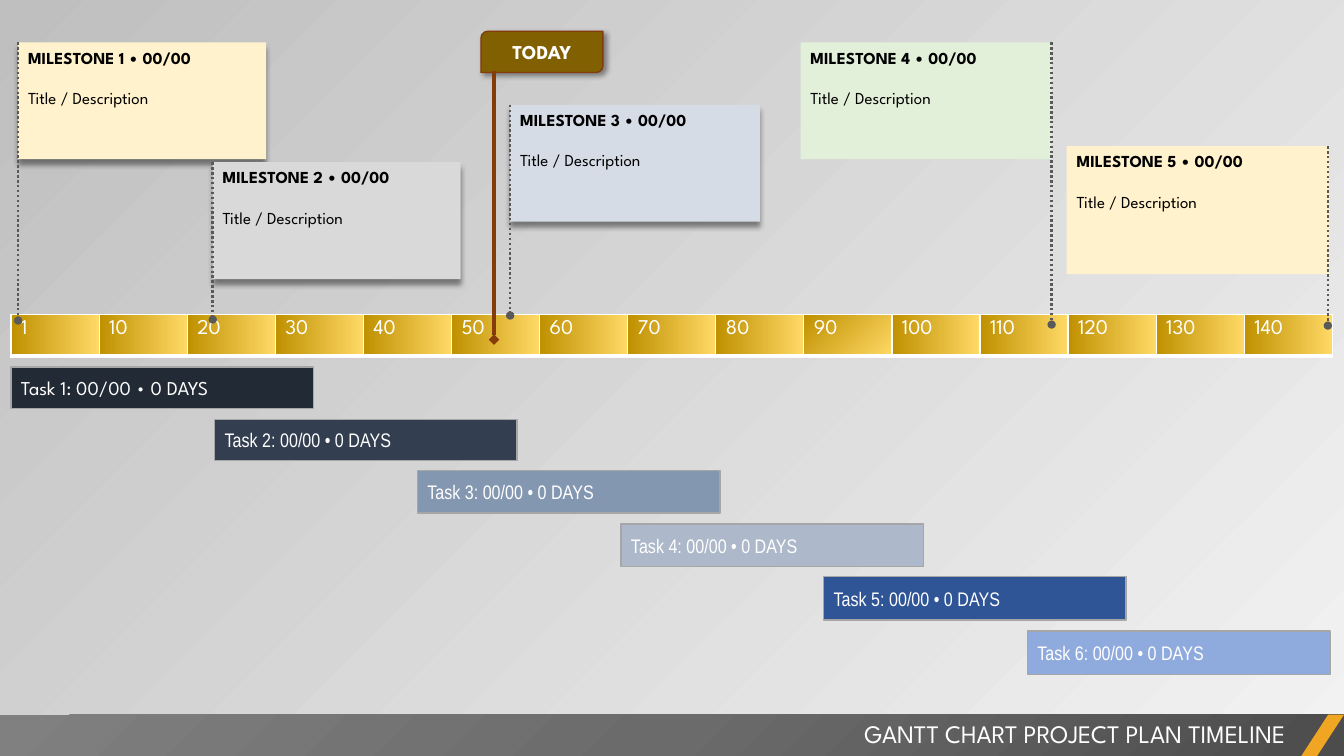
from dataclasses import dataclass

from lxml import etree
from pptx import Presentation
from pptx import util as u
from pptx.dml.color import RGBColor
from pptx.dml.fill import FillFormat
from pptx.enum import dml, shapes, text
from pptx.oxml import parse_xml
from pptx.oxml.ns import nsdecls, qn
from pptx.shapes.autoshape import Shape
from pptx.shapes.connector import Connector
from pptx.slide import Slide

EMU_PER_PX = 9144  # 100 px to the inch
SLIDE_WIDTH, SLIDE_HEIGHT = 1333, 750
SPARTAN, NARROW = "League Spartan", "Arial Narrow"
WHITE, BLACK, BROWN, DARK_GREY = "FFFFFF", "000000", "843C0B", "595959"
SHAPE = shapes.MSO_SHAPE


@dataclass(frozen=True)
class Box:
    left: int
    top: int
    width: int
    height: int

    def emu(self) -> list[u.Emu]:
        return [px(n) for n in (self.left, self.top, self.width, self.height)]


@dataclass(frozen=True)
class Shadow:
    opacity: int
    blur: int
    distance: int
    angle: int


@dataclass(frozen=True)
class Task:
    top: int
    height: int
    fill: str
    font: str = NARROW


@dataclass(frozen=True)
class Milestone:
    box: Box
    fill: str
    line_x: int
    line_end: int
    shadow: Shadow | None = None


CARD_SHADOW = Shadow(opacity=43, blur=4, distance=4, angle=90)
FLAG_SHADOW = Shadow(opacity=40, blur=4, distance=3, angle=45)

TASKS = [
    Task(364, 41, "222A35", SPARTAN),
    Task(416, 41, "333F50"),
    Task(467, 42, "8497B0"),
    Task(520, 42, "ADB9CA"),
    Task(572, 43, "2F5597"),
    Task(626, 43, "8FAADC"),
]
MILESTONES = [
    Milestone(Box(18, 42, 246, 116), "FFF2CC", 18, 318, CARD_SHADOW),
    Milestone(Box(211, 161, 246, 116), "D9D9D9", 211, 317, CARD_SHADOW),
    Milestone(Box(506, 104, 248, 116), "D6DCE5", 506, 313, CARD_SHADOW),
    Milestone(Box(794, 42, 249, 116), "E2F0D9", 1043, 322),
    Milestone(Box(1058, 145, 260, 127), "FFF2CC", 1317, 323),
]
DAYS = [1, *range(10, 150, 10)]


def px(length: float) -> u.Emu:
    return u.Emu(round(length * EMU_PER_PX))


def rgb(color: str) -> RGBColor:
    return RGBColor.from_string(color)


def fill_gradient(fill: FillFormat, start: str, end: str, angle: int) -> None:
    """Fill with two colours; the angle runs clockwise."""
    fill.gradient()
    fill.gradient_angle = -angle % 360
    for stop, color in zip(fill.gradient_stops, (start, end)):
        stop.color.rgb = rgb(color)


def add_box(parent, kind: SHAPE, box: Box, fill: str, line: str | None = None,
            shadow: Shadow | None = None) -> Shape:
    shape = parent.add_shape(kind, *box.emu())
    shape.fill.solid()
    shape.fill.fore_color.rgb = rgb(fill)
    if line:
        shape.line.color.rgb = rgb(line)
        shape.line.width = u.Pt(1)
    else:
        shape.line.fill.background()
    shape.shadow.inherit = False
    if shadow:
        effects = shape.element.spPr.find(qn("a:effectLst"))
        effects.append(parse_xml(
            f'<a:outerShdw {nsdecls("a")} blurRad="{u.Pt(shadow.blur)}" dist="{u.Pt(shadow.distance)}" '
            f'dir="{shadow.angle * 60000}" algn="ctr" rotWithShape="0"><a:srgbClr val="{BLACK}">'
            f'<a:alpha val="{shadow.opacity * 1000}"/></a:srgbClr></a:outerShdw>'))
    return shape


def write(paragraph, words: str, size: int, color: str, font: str = SPARTAN,
          bold: bool = False, align=text.PP_ALIGN.LEFT) -> None:
    paragraph.text = words
    paragraph.alignment = align
    paragraph.font.name = font
    paragraph.font.size = u.Pt(size)
    paragraph.font.bold = bold
    paragraph.font.color.rgb = rgb(color)


def add_marker(parent, x: int, top: int, bottom: int, color: str, width: float, tail: str) -> Connector:
    """Draw a vertical line that ends in a symbol on the day scale."""
    marker = parent.add_connector(shapes.MSO_CONNECTOR.STRAIGHT, px(x), px(top), px(x), px(bottom))
    marker.line.color.rgb = rgb(color)
    marker.line.width = u.Pt(width)
    properties = marker.element.spPr
    etree.SubElement(properties.find(qn("a:ln")), qn("a:tailEnd"), type=tail)
    etree.SubElement(properties, qn("a:effectLst"))
    return marker


def add_task(slide: Slide, index: int, task: Task) -> None:
    box = Box(round(11 + 201.6 * index), task.top, 300, task.height)
    bar = add_box(slide.shapes, SHAPE.RECTANGLE, box, task.fill, "A6A6A6")
    bar.text_frame.vertical_anchor = text.MSO_ANCHOR.MIDDLE
    write(bar.text_frame.paragraphs[0], f"Task {index + 1}: 00/00 • 0 DAYS", 14, WHITE, task.font)


def add_day_scale(slide: Slide) -> None:
    table = slide.shapes.add_table(1, len(DAYS), *Box(11, 312, 1311, 41).emu()).table
    table.first_row = table.horz_banding = False
    for column, day in enumerate(DAYS):
        table.columns[column].width = px(1311 / len(DAYS))
        cell = table.cell(0, column)
        write(cell.text_frame.paragraphs[0], str(day), 15, WHITE)
        fill_gradient(cell.fill, "BF9000", "FFD966", 45 if day == 90 else 0)
        properties = cell.text_frame._txBody.getparent().get_or_add_tcPr()
        for position, (side, width) in enumerate({"L": 1, "R": 1, "T": 1, "B": 3}.items()):
            properties.insert(position, parse_xml(
                f'<a:ln{side} {nsdecls("a")} w="{u.Pt(width)}"><a:solidFill>'
                f'<a:srgbClr val="{WHITE}"/></a:solidFill></a:ln{side}>'))


def add_today(slide: Slide) -> None:
    group = slide.shapes.add_group_shape().shapes
    flag = add_box(group, SHAPE.ROUND_2_DIAG_RECTANGLE, Box(477, 31, 121, 41), "806000", BROWN, FLAG_SHADOW)
    flag.text_frame.vertical_anchor = text.MSO_ANCHOR.MIDDLE
    write(flag.text_frame.paragraphs[0], "TODAY", 14, WHITE, bold=True, align=text.PP_ALIGN.CENTER)
    add_marker(group, 490, 70, 337, BROWN, 2.5, "diamond")


def add_milestone(slide: Slide, number: int, milestone: Milestone) -> None:
    group = slide.shapes.add_group_shape().shapes
    card = add_box(group, SHAPE.RECTANGLE, milestone.box, milestone.fill, shadow=milestone.shadow)
    frame = card.text_frame
    frame.vertical_anchor = text.MSO_ANCHOR.TOP
    write(frame.paragraphs[0], f"MILESTONE {number} • 00/00", 12, BLACK, bold=True)
    description = frame.add_paragraph()
    write(description, "Title / Description", 12, BLACK)
    description.space_before = u.Pt(14.4)
    marker = add_marker(group, milestone.line_x, milestone.box.top, milestone.line_end, DARK_GREY, 1.75, "oval")
    marker.line.dash_style = dml.MSO_LINE.ROUND_DOT


def add_footer(slide: Slide) -> None:
    band = add_box(slide.shapes, SHAPE.RECTANGLE, Box(0, 709, SLIDE_WIDTH, 42), "6B6B6B")
    solid = band.element.spPr.find(qn("a:solidFill"))
    stops = "".join(f'<a:gs pos="{position}000"><a:srgbClr val="{color}"/></a:gs>'
                    for position, color in ((0, "4C4C4C"), (50, "6B6B6B"), (100, "808080")))
    solid.getparent().replace(solid, parse_xml(
        f'<a:gradFill {nsdecls("a")}><a:gsLst>{stops}</a:gsLst><a:path path="circle">'
        '<a:fillToRect l="100000" t="100000"/></a:path></a:gradFill>'))
    title = slide.shapes.add_textbox(*Box(525, 708, 760, 40).emu()).text_frame
    title.word_wrap = True
    title.auto_size = text.MSO_AUTO_SIZE.SHAPE_TO_FIT_TEXT
    write(title.paragraphs[0], "GANTT CHART PROJECT PLAN TIMELINE", 18, WHITE, align=text.PP_ALIGN.RIGHT)
    accent = add_box(slide.shapes, SHAPE.PARALLELOGRAM, Box(1290, 709, 43, 42), "F0A622")
    accent.adjustments[0] = 0.65


def main() -> None:
    presentation = Presentation()
    presentation.slide_width, presentation.slide_height = px(SLIDE_WIDTH), px(SLIDE_HEIGHT)
    slide = presentation.slides.add_slide(presentation.slide_layouts[6])
    fill_gradient(slide.background.fill, "F2F2F2", "BFBFBF", 225)
    for index, task in enumerate(TASKS):
        add_task(slide, index, task)
    add_day_scale(slide)
    add_today(slide)
    for number, milestone in enumerate(MILESTONES, start=1):
        add_milestone(slide, number, milestone)
    add_footer(slide)
    presentation.save("out.pptx")


if __name__ == "__main__":
    main()
